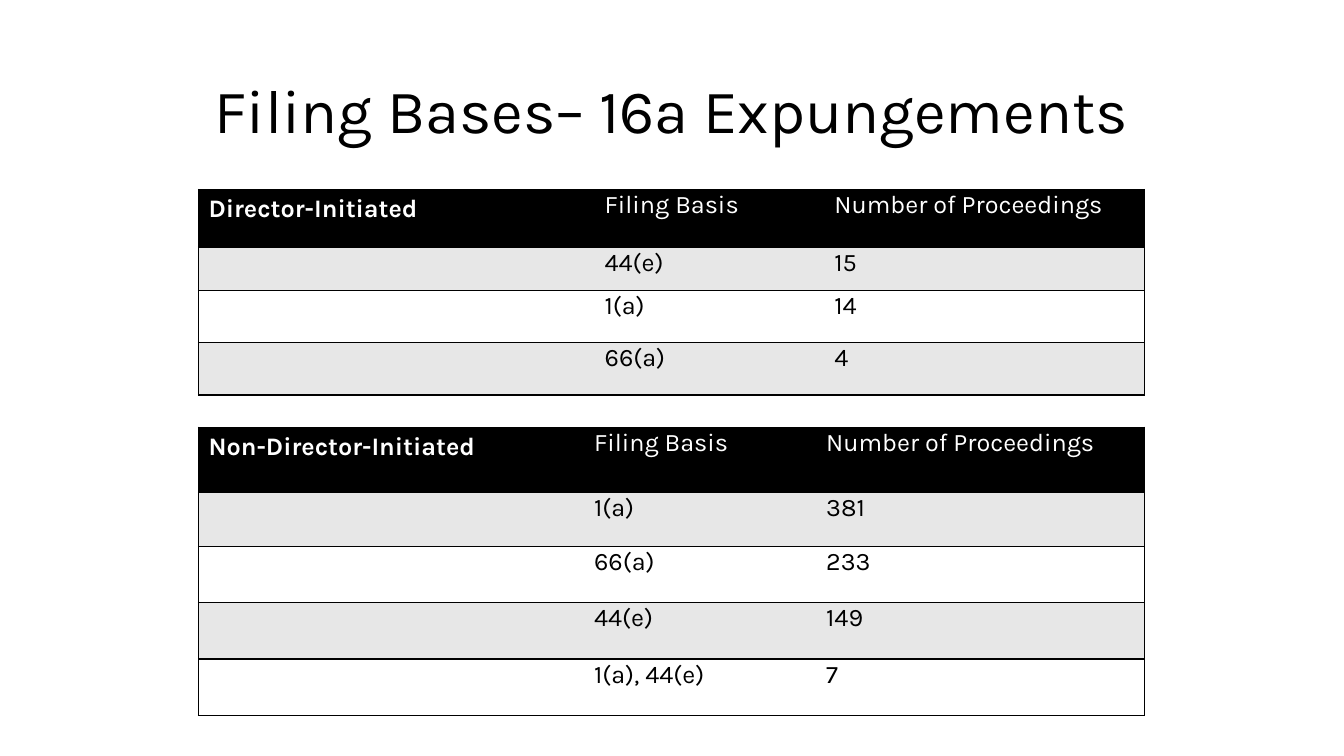
from dataclasses import dataclass

from lxml import etree
from pptx import Presentation
from pptx.dml.color import RGBColor
from pptx.enum import text as t
from pptx.oxml import ns
from pptx.util import Pt

FONT = "Karla"
BLACK, WHITE, GREY = "000000", "FFFFFF", "E7E7E7"
LEFT = 141.8
HEADS = ("Filing Basis", "Number of Proceedings")


@dataclass
class Block:
    name: str
    top: float
    cols: list[float]
    highs: list[float]
    rows: list[tuple[str, str]]


BLOCKS = [
    Block("Director-Initiated", 135.4, [289.4, 164.2, 222.4],
          [41, 31, 37.4, 37.4],
          [("44(e)", "15"), ("1(a)", "14"), ("66(a)", "4")]),
    Block("Non-Director-Initiated", 305.2, [281.9, 165.8, 228.3],
          [46.8, 38.2, 40.3, 40.3, 40.3],
          [("1(a)", "381"), ("66(a)", "233"), ("44(e)", "149"),
           ("1(a), 44(e)", "7")]),
]


def color(code: str) -> RGBColor:
    return RGBColor.from_string(code)


def style(para, size: float, code: str, bold: bool = False) -> None:
    for font in [para.font] + [run.font for run in para.runs]:
        font.name, font.size, font.bold = FONT, Pt(size), bold
        font.color.rgb = color(code)


def border(cell, sides: str) -> None:
    """Draw the named sides in black and clear the others."""
    props = cell._tc.get_or_add_tcPr()
    for spot, side in enumerate("LRTB"):
        line = etree.Element(ns.qn(f"a:ln{side}"), w=str(Pt(1)))
        if side in sides:
            fill = etree.SubElement(line, ns.qn("a:solidFill"))
            etree.SubElement(fill, ns.qn("a:srgbClr"), val=BLACK)
        else:
            etree.SubElement(line, ns.qn("a:noFill"))
        props.insert(spot, line)


def draw_title(slide, label: str) -> None:
    box = slide.shapes.add_textbox(Pt(66), Pt(28.8), Pt(828), Pt(104.4))
    frame = box.text_frame
    frame.word_wrap = True
    frame.vertical_anchor = t.MSO_ANCHOR.MIDDLE
    frame.text = label
    para = frame.paragraphs[0]
    para.alignment = t.PP_ALIGN.CENTER
    para.line_spacing = 0.9
    style(para, 44, BLACK)


def draw_block(slide, block: Block) -> None:
    grid = [(block.name, *HEADS)] + [("", *row) for row in block.rows]
    table = slide.shapes.add_table(
        len(grid), len(block.cols), Pt(LEFT), Pt(block.top),
        Pt(sum(block.cols)), Pt(sum(block.highs))).table
    for col, width in zip(table.columns, block.cols):
        col.width = Pt(width)
    for row, high in zip(table.rows, block.highs):
        row.height = Pt(high)

    for r, row in enumerate(grid):
        back = BLACK if r == 0 else GREY if r % 2 else WHITE
        for c, label in enumerate(row):
            cell = table.cell(r, c)
            cell.text_frame.text = label
            style(cell.text_frame.paragraphs[0], 18,
                  BLACK if r else WHITE, r == 0 and c == 0)
            if c:
                cell.margin_left = cell.margin_right = Pt(0.7)
                cell.margin_top, cell.margin_bottom = Pt(0.7), Pt(0)
            cell.fill.solid()
            cell.fill.fore_color.rgb = color(back)
            border(cell, "TB" + ("L", "", "R")[c])


def main() -> None:
    deck = Presentation()
    deck.slide_width, deck.slide_height = Pt(960), Pt(540)
    slide = deck.slides.add_slide(deck.slide_layouts[6])

    # Title
    draw_title(slide, "Filing Bases– 16a Expungements")

    # Tables
    for block in BLOCKS:
        draw_block(slide, block)

    deck.save("out.pptx")


if __name__ == "__main__":
    main()
